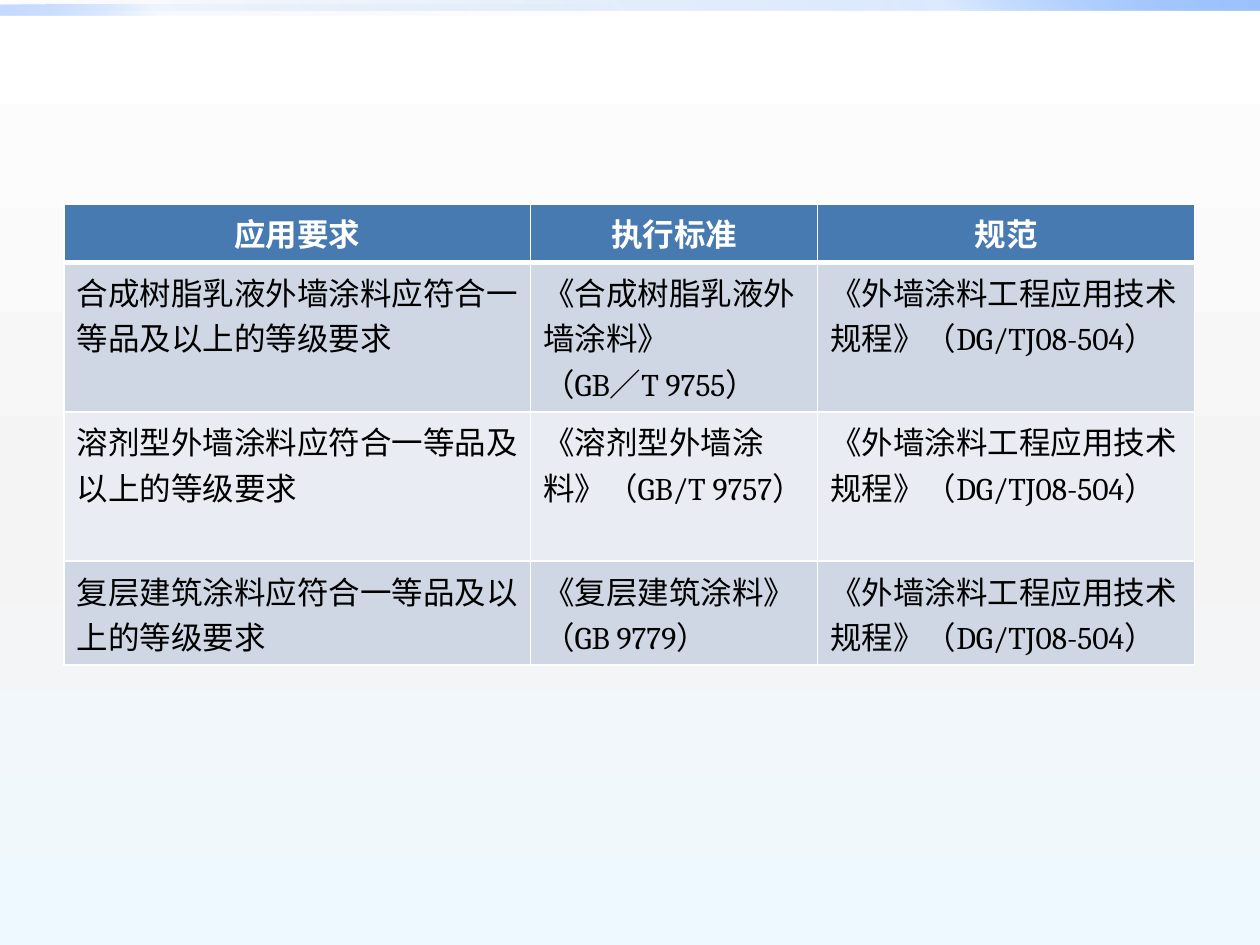
from lxml import etree
from pptx import Presentation
from pptx.dml.color import RGBColor
from pptx.enum.shapes import MSO_SHAPE
from pptx.enum.text import PP_ALIGN
from pptx.oxml.ns import qn
from pptx.util import Inches, Pt

RECTANGLE = MSO_SHAPE.RECTANGLE
LEFT, CENTER = PP_ALIGN.LEFT, PP_ALIGN.CENTER

WHITE = RGBColor(0xFF, 0xFF, 0xFF)
BLACK = RGBColor(0x00, 0x00, 0x00)
GREY = RGBColor(0xF4, 0xF4, 0xF4)
ICE = RGBColor(0xEE, 0xF9, 0xFF)
DEEP_BLUE = RGBColor(0x00, 0x58, 0xB7)
MID_BLUE = RGBColor(0x4F, 0x95, 0xFF)
PALE_BLUE = RGBColor(0x9E, 0xC2, 0xFF)
HEADER_FILL = RGBColor(0x47, 0x7A, 0xB1)
BAND_FILLS = (RGBColor(0xCF, 0xD7, 0xE4), RGBColor(0xE9, 0xEC, 0xF2))

FONT = "Cambria"

# Content: each cell is a list of paragraphs
CODE_OF_PRACTICE = ["《外墙涂料工程应用技术规程》（DG/TJ08-504）"]
HEADER = [["应用要求"], ["执行标准"], ["规范"]]
REQUIREMENTS = [
    [["合成树脂乳液外墙涂料应符合一等品及以上的等级要求"],
     ["《合成树脂乳液外墙涂料》", "（GB／T 9755）"], CODE_OF_PRACTICE],
    [["溶剂型外墙涂料应符合一等品及以上的等级要求"],
     ["《溶剂型外墙涂料》（GB/T 9757）"], CODE_OF_PRACTICE],
    [["复层建筑涂料应符合一等品及以上的等级要求"],
     ["《复层建筑涂料》（GB 9779）"], CODE_OF_PRACTICE],
]
COLUMN_WIDTHS = (3.7, 2.28, 2.99)
ROW_HEIGHT = 0.41

# Gradients: stops of (position %, colour, opacity %), clockwise angle
BACKDROP = [(0, WHITE, 100), (55, GREY, 100), (100, ICE, 100)]
TOP_BARS = [
    ((0, 0, 10, 0.08),
     [(0, DEEP_BLUE, 0), (75, MID_BLUE, 20), (100, PALE_BLUE, 100)], 315),
    ((0, 0.04, 5, 0.08),
     [(0, DEEP_BLUE, 0), (75, MID_BLUE, 5), (100, PALE_BLUE, 60)], 135),
]


def add_color(parent, color, opacity=100):
    srgb = etree.SubElement(parent, qn("a:srgbClr"), val=str(color))
    if opacity < 100:
        etree.SubElement(srgb, qn("a:alpha"), val=str(opacity * 1000))


def set_gradient(fill, element, stops, angle):
    fill.gradient()
    fill.gradient_angle = 360 - angle
    stop_list = next(element.iter(qn("a:gsLst")))
    for old_stop in list(stop_list):
        stop_list.remove(old_stop)
    for position, color, opacity in stops:
        stop = etree.SubElement(stop_list, qn("a:gs"), pos=str(position * 1000))
        add_color(stop, color, opacity)


def set_borders(cell, **widths):
    properties = cell._tc.get_or_add_tcPr()
    for side in ("L", "R", "T", "B"):
        line = etree.SubElement(properties, qn(f"a:ln{side}"),
                                w=str(Pt(widths.get(side, 1))))
        add_color(etree.SubElement(line, qn("a:solidFill")), WHITE)


def write_text(frame, paragraphs, *, color=BLACK, bold=False, align=LEFT, size=18):
    for index, text in enumerate(paragraphs):
        paragraph = frame.paragraphs[0] if index == 0 else frame.add_paragraph()
        paragraph.alignment = align
        run = paragraph.add_run()
        run.text = text
        run.font.name = FONT
        run.font.size = Pt(size)
        run.font.bold = bold
        run.font.color.rgb = color


def main():
    deck = Presentation()
    deck.slide_width, deck.slide_height = Inches(10), Inches(7.5)
    slide = deck.slides.add_slide(deck.slide_layouts[6])

    # Backdrop and top bars
    set_gradient(slide.background.fill, slide._element, BACKDROP, 90)
    for place, stops, angle in TOP_BARS:
        bar = slide.shapes.add_shape(RECTANGLE, *map(Inches, place))
        bar.shadow.inherit = False
        bar.line.fill.background()
        set_gradient(bar.fill, bar._element, stops, angle)

    # Requirements table
    rows = [HEADER] + REQUIREMENTS
    table_frame = slide.shapes.add_table(
        len(rows), len(COLUMN_WIDTHS), Inches(0.51), Inches(1.62),
        Inches(sum(COLUMN_WIDTHS)), Inches(ROW_HEIGHT * len(rows)))
    table = table_frame.table
    for column, width in zip(table.columns, COLUMN_WIDTHS):
        column.width = Inches(width)

    for r, row in enumerate(rows):
        table.rows[r].height = Inches(ROW_HEIGHT)
        is_header = r == 0
        for c, paragraphs in enumerate(row):
            cell = table.cell(r, c)
            set_borders(cell, T=3 if r == 1 else 1, B=3 if is_header else 1)
            cell.fill.solid()
            if is_header:
                cell.fill.fore_color.rgb = HEADER_FILL
                write_text(cell.text_frame, paragraphs,
                           color=WHITE, bold=True, align=CENTER)
            else:
                cell.fill.fore_color.rgb = BAND_FILLS[(r - 1) % 2]
                write_text(cell.text_frame, paragraphs)

    deck.save("out.pptx")


if __name__ == "__main__":
    main()
